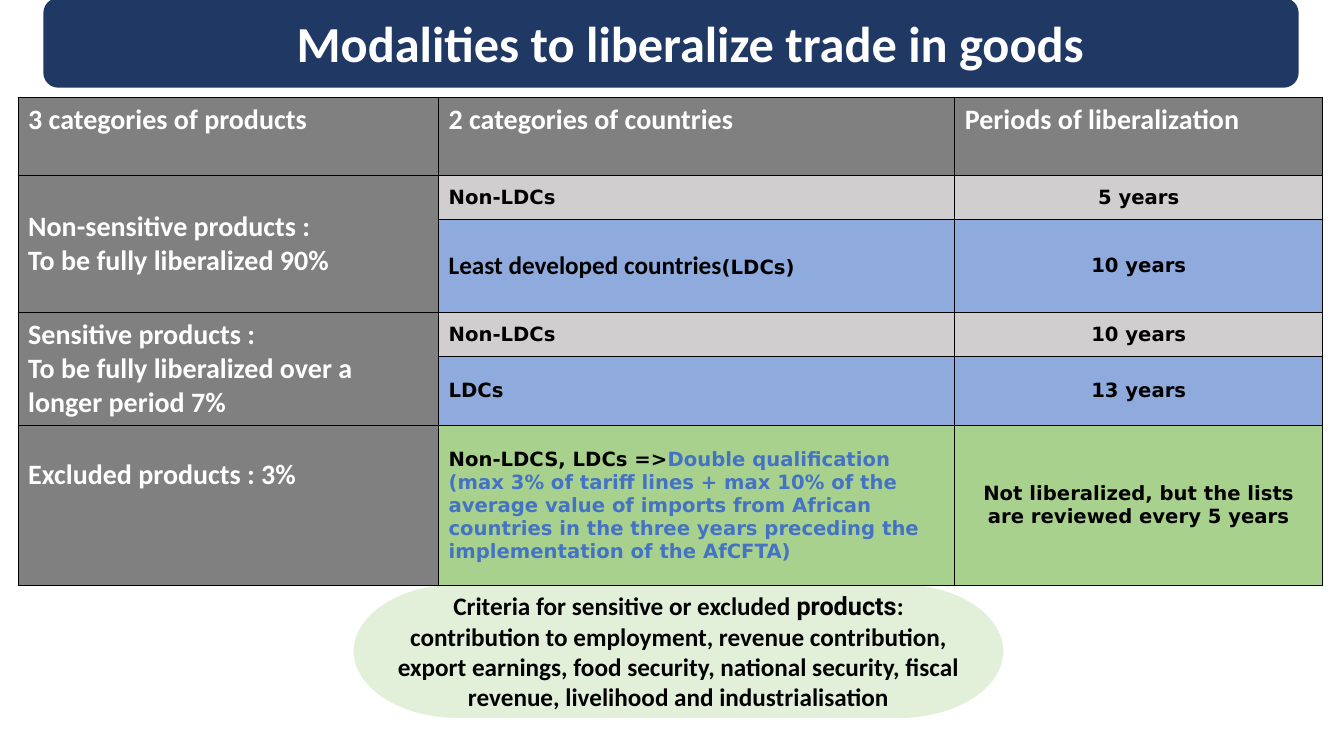
from dataclasses import dataclass

from lxml.etree import SubElement
from pptx import Presentation
from pptx.dml.color import RGBColor
from pptx.enum.shapes import MSO_SHAPE as Shape
from pptx.enum.text import MSO_ANCHOR as Anchor, PP_ALIGN as Align
from pptx.oxml.ns import qn
from pptx.util import Inches, Pt


@dataclass(frozen=True)
class Theme:
    navy: str = "203864"
    gray: str = "808080"
    silver: str = "D0CECE"
    blue: str = "8FAADC"
    green: str = "A9D18E"
    pale_green: str = "E2F0D9"
    accent: str = "4472C4"
    white: str = "FFFFFF"
    black: str = "000000"
    title_size: int = 36
    heading_size: int = 20
    note_size: int = 18
    body_size: int = 14
    main_font: str = "Calibri"
    body_font: str = "DejaVu Sans"
    note_font: str = "Roboto"


THEME = Theme()
TITLE = {"name": THEME.main_font, "size": THEME.title_size, "color": THEME.white}
HEADING = {**TITLE, "size": THEME.heading_size}
NOTE = {**TITLE, "size": THEME.note_size, "color": THEME.black}
NOTE_WORD = {**NOTE, "name": THEME.note_font}
BODY = {"name": THEME.body_font, "size": THEME.body_size, "color": THEME.black}
ACCENT = {**BODY, "color": THEME.accent}

COLUMN_WIDTHS = [4.17, 5.12, 3.65]
ROW_HEIGHTS = [0.77, 0.44, 0.92, 0.44, 0.66, 1.59]
HEADERS = ["3 categories of products", "2 categories of countries", "Periods of liberalization"]
PRODUCTS = [
    (1, 2, ["Non-sensitive products :", "To be fully liberalized 90%"]),
    (3, 4, ["Sensitive products :", "To be fully liberalized over a longer period 7%"]),
    (5, 5, ["Excluded products : 3%"]),
]
COUNTRIES = [
    (THEME.silver, [[("Non-LDCs", BODY)]], "5 years"),
    (THEME.blue, [[("Least developed countries", NOTE), ("(LDCs)", BODY)]], "10 years"),
    (THEME.silver, [[("Non-LDCs", BODY)]], "10 years"),
    (THEME.blue, [[("LDCs", BODY)]], "13 years"),
    (
        THEME.green,
        [
            [("Non-LDCS, LDCs =>", BODY), ("Double qualification", ACCENT)],
            [(
                "(max 3% of tariff lines + max 10% of the average value of imports from African "
                "countries in the three years preceding the implementation of the AfCFTA)",
                ACCENT,
            )],
        ],
        "Not liberalized, but the lists are reviewed every 5 years",
    ),
]
CRITERIA = [[
    ("Criteria for sensitive or excluded ", NOTE),
    ("products", NOTE_WORD),
    (
        ": contribution to employment, revenue contribution, export earnings, food security, "
        "national security, fiscal revenue, livelihood and industrialisation",
        NOTE,
    ),
]]


def set_attributes(target, values):
    for name, value in values.items():
        setattr(target, name, value)


def place(shape, left, top, width, height):
    box = {"left": left, "top": top, "width": width, "height": height}
    set_attributes(shape, {name: Inches(value) for name, value in box.items()})


def fill_solid(target, color):
    target.fill.solid()
    target.fill.fore_color.rgb = RGBColor.from_string(color)


def write_text(frame, paragraphs, align=Align.LEFT):
    for index, runs in enumerate(paragraphs):
        paragraph = frame.add_paragraph() if index else frame.paragraphs[0]
        paragraph.alignment = align
        for text, style in runs:
            run = paragraph.add_run()
            run.text = text
            set_attributes(run.font, {"name": style["name"], "size": Pt(style["size"]), "bold": True})
            run.font.color.rgb = RGBColor.from_string(style["color"])


def add_panel(slide, kind, box, color, line=None):
    shape = slide.shapes.add_shape(kind, *map(Inches, box))
    shape.shadow.inherit = False
    fill_solid(shape, color)
    if line:
        shape.line.color.rgb = RGBColor.from_string(line)
        shape.line.width = Pt(1)
    else:
        shape.line.fill.background()
    return shape


def add_title(slide, text):
    box = (0.43, -0.02, 12.45, 0.89)
    banner = add_panel(slide, Shape.ROUNDED_RECTANGLE, box, THEME.navy)
    title = slide.shapes.title
    place(title, *box)
    title.element.addprevious(banner.element)
    set_attributes(title.text_frame, {
        "vertical_anchor": Anchor.MIDDLE,
        "word_wrap": True,
        "margin_left": Inches(0.49),
        "margin_right": Inches(0.1),
    })
    write_text(title.text_frame, [[(text, TITLE)]], Align.CENTER)
    title.text_frame.paragraphs[0].line_spacing = 1.0


def format_cell(cell, color, paragraphs=(), anchor=Anchor.MIDDLE, align=Align.LEFT):
    properties = cell._tc.get_or_add_tcPr()
    for side in ("lnL", "lnR", "lnT", "lnB"):
        border = SubElement(properties, qn(f"a:{side}"), w=str(Pt(1)))
        border_fill = SubElement(border, qn("a:solidFill"))
        SubElement(border_fill, qn("a:srgbClr"), val=THEME.black)
    fill_solid(cell, color)
    cell.vertical_anchor = anchor
    write_text(cell.text_frame, paragraphs, align)


def add_modalities_table(slide):
    box = (0.18, 0.97, sum(COLUMN_WIDTHS), sum(ROW_HEIGHTS))
    table = slide.shapes.add_table(
        len(ROW_HEIGHTS), len(COLUMN_WIDTHS), *map(Inches, box)
    ).table
    set_attributes(table, {"first_row": False, "horz_banding": False})
    for column, width in zip(table.columns, COLUMN_WIDTHS):
        column.width = Inches(width)
    for row, height in zip(table.rows, ROW_HEIGHTS):
        row.height = Inches(height)
    for index, header in enumerate(HEADERS):
        format_cell(table.cell(0, index), THEME.gray, [[(header, HEADING)]], Anchor.TOP)
    for first, last, lines in PRODUCTS:
        format_cell(table.cell(first, 0), THEME.gray, [[(line, HEADING)] for line in lines])
        if last > first:
            format_cell(table.cell(last, 0), THEME.gray)
            table.cell(first, 0).merge(table.cell(last, 0))
    table.cell(5, 0).margin_bottom = Inches(0.65)
    for index, (color, countries, period) in enumerate(COUNTRIES, start=1):
        format_cell(table.cell(index, 1), color, countries)
        format_cell(table.cell(index, 2), color, [[(period, BODY)]], align=Align.CENTER)


def add_criteria(slide):
    shape = add_panel(
        slide, Shape.FLOWCHART_TERMINATOR, (3.5, 5.79, 6.46, 1.34), THEME.pale_green, THEME.white
    )
    set_attributes(shape.text_frame, {"word_wrap": True, "vertical_anchor": Anchor.MIDDLE})
    write_text(shape.text_frame, CRITERIA, Align.CENTER)


def main():
    presentation = Presentation()
    set_attributes(presentation, {"slide_width": Inches(13.33), "slide_height": Inches(7.5)})
    slide = presentation.slides.add_slide(presentation.slide_layouts[5])
    add_title(slide, "Modalities to liberalize trade in goods")
    add_criteria(slide)
    add_modalities_table(slide)
    presentation.save("out.pptx")


if __name__ == "__main__":
    main()
